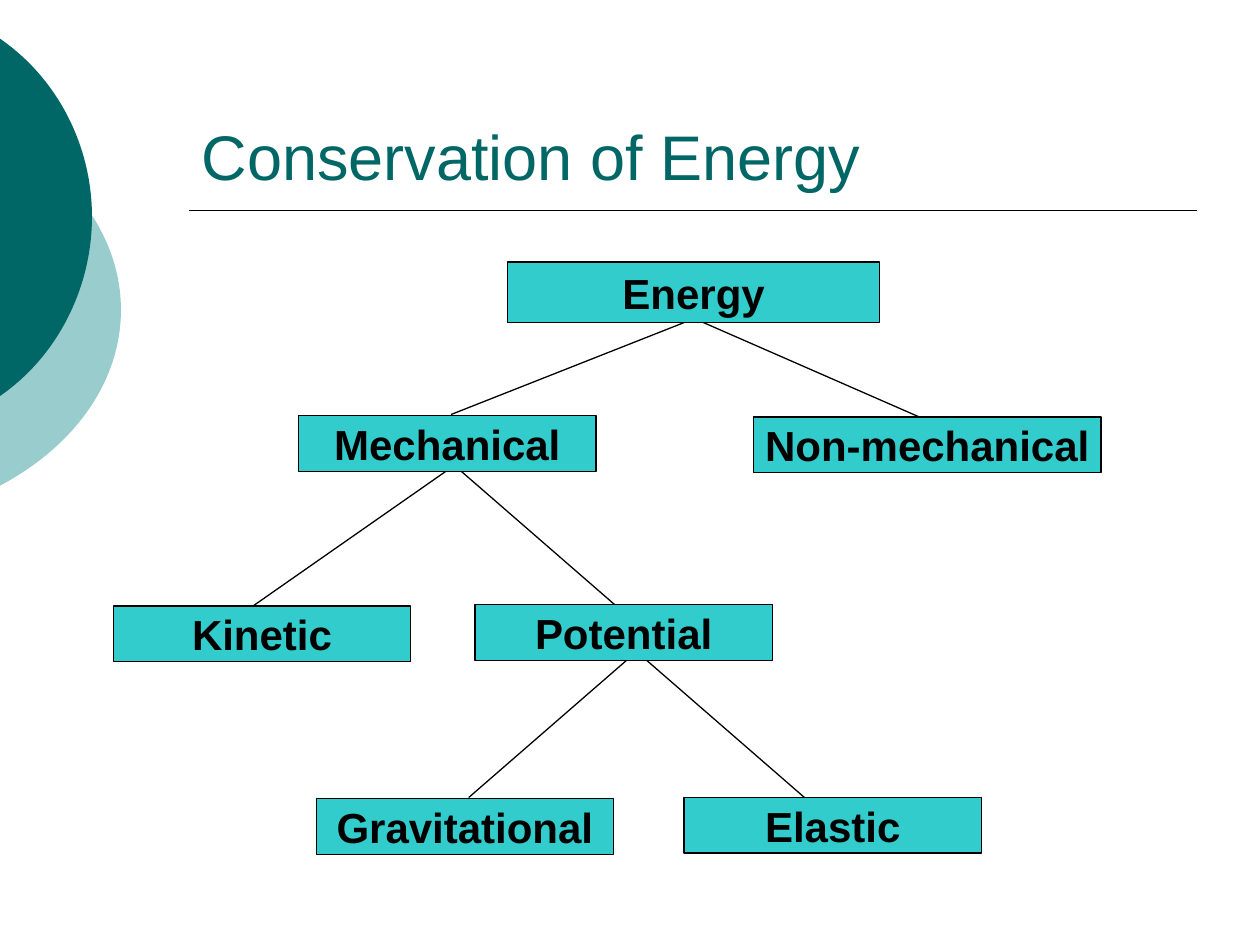
from dataclasses import dataclass

from lxml.etree import SubElement
from pptx import Presentation
from pptx.dml.color import RGBColor
from pptx.enum.shapes import MSO_CONNECTOR, MSO_SHAPE
from pptx.enum.text import MSO_ANCHOR, MSO_AUTO_SIZE, PP_ALIGN
from pptx.oxml.ns import qn
from pptx.util import Inches, Pt


@dataclass(frozen=True)
class Theme:
    font: str = "Arial"
    dark_teal: str = "006666"
    pale_teal: str = "99CCCC"
    box_fill: str = "33CCCC"
    ink: str = "000000"
    title_size: float = 36
    box_size: float = 24
    rule_width: float = 1
    line_width: float = 0.75


def color(value):
    return RGBColor.from_string(value)


def write_text(frame, text, *, font, size, ink, bold=False,
               align=PP_ALIGN.LEFT, anchor=MSO_ANCHOR.MIDDLE, wrap=True):
    frame.auto_size = MSO_AUTO_SIZE.NONE
    frame.word_wrap = wrap
    frame.vertical_anchor = anchor
    para = frame.paragraphs[0]
    para.alignment = align
    span = para.add_run()
    span.text = text
    span.font.name = font
    span.font.size = Pt(size)
    span.font.bold = bold
    span.font.color.rgb = color(ink)


class SlideBuilder:
    def __init__(self, page, theme):
        self.page = page
        self.theme = theme

    def title(self, text, left, top, width, height):
        box = self.page.shapes.title
        box.left, box.top = Inches(left), Inches(top)
        box.width, box.height = Inches(width), Inches(height)
        write_text(box.text_frame, text, font=self.theme.font,
                   size=self.theme.title_size, ink=self.theme.dark_teal,
                   anchor=MSO_ANCHOR.BOTTOM)

    def curved_shape(self, frame, start, curves, fill):
        left, top, width, height = frame
        builder = self.page.shapes.build_freeform(Inches(left), Inches(top))
        builder.add_line_segments([
            (Inches(left + width), Inches(top)),
            (Inches(left + width), Inches(top + height)),
        ], close=True)
        shape = builder.convert_to_shape()
        outline = next(shape._element.iter(qn("a:path")))
        for segment in list(outline):
            outline.remove(segment)
        segments = [("a:moveTo", [start])]
        segments += [("a:cubicBezTo", points) for points in curves]
        for tag, points in segments:
            segment = SubElement(outline, qn(tag))
            for x, y in points:
                SubElement(segment, qn("a:pt"), x=str(Inches(x - left)),
                           y=str(Inches(y - top)))
        SubElement(outline, qn("a:close"))
        shape.shadow.inherit = False
        shape.fill.solid()
        shape.fill.fore_color.rgb = color(fill)
        shape.line.fill.background()

    def edge_disc(self, frame, top, middle, bottom, reach, bend, fill):
        edge = -0.01
        rise, shoulder = 0.32, 0.56
        self.curved_shape(frame, (edge, top), [
            [(bend, top + rise), (reach, middle - shoulder), (reach, middle)],
            [(reach, middle + shoulder), (bend, bottom - rise), (edge, bottom)],
        ], fill)

    def line(self, start, end, width):
        link = self.page.shapes.add_connector(
            MSO_CONNECTOR.STRAIGHT, *map(Inches, (*start, *end)))
        link.line.color.rgb = color(self.theme.ink)
        link.line.width = Pt(width)
        SubElement(link._element.spPr, qn("a:effectLst"))

    def box(self, text, left, top, width=2.36, height=0.44):
        box = self.page.shapes.add_shape(
            MSO_SHAPE.RECTANGLE, *map(Inches, (left, top, width, height)))
        box.shadow.inherit = False
        box.fill.solid()
        box.fill.fore_color.rgb = color(self.theme.box_fill)
        box.line.color.rgb = color(self.theme.ink)
        box.line.width = Pt(self.theme.line_width)
        write_text(box.text_frame, text, font=self.theme.font,
                   size=self.theme.box_size, ink=self.theme.ink, bold=True,
                   align=PP_ALIGN.CENTER, wrap=False)


def main():
    deck = Presentation()
    deck.slide_width, deck.slide_height = Inches(10), Inches(7.5)
    page = deck.slides.add_slide(deck.slide_layouts[5])
    theme = Theme()
    builder = SlideBuilder(page, theme)

    builder.edge_disc((-3.54, 0.75, 4.5, 3.42), 1.06, 2.46, 3.86,
                      reach=0.96, bend=0.6, fill=theme.pale_teal)
    builder.edge_disc((-2.65, 0, 3.38, 3.45), 0.3, 1.72, 3.15,
                      reach=0.73, bend=0.46, fill=theme.dark_teal)
    builder.line((1.5, 1.67), (9.5, 1.67), theme.rule_width)
    builder.title("Conservation of Energy", 1.5, 0.33, 8, 1.25)

    branches = [
        ((5.02, 5.2), (3.72, 6.33)),
        ((5.12, 5.23), (6.42, 6.36)),
        ((3.54, 3.74), (1.95, 4.85)),
        ((3.66, 3.74), (4.88, 4.8)),
        ((5.56, 2.55), (7.32, 3.32)),
        ((5.43, 2.56), (3.58, 3.29)),
    ]
    for start, end in branches:
        builder.line(start, end, theme.line_width)

    builder.box("Energy", 4.03, 2.08, width=2.95, height=0.48)
    for text, left, top in [
        ("Mechanical", 2.37, 3.3),
        ("Kinetic", 0.9, 4.81),
        ("Potential", 3.77, 4.8),
        ("Gravitational", 2.51, 6.34),
        ("Elastic", 5.43, 6.33),
    ]:
        builder.box(text, left, top)
    builder.box("Non-mechanical", 5.98, 3.31, width=2.76)

    deck.save("out.pptx")


if __name__ == "__main__":
    main()
